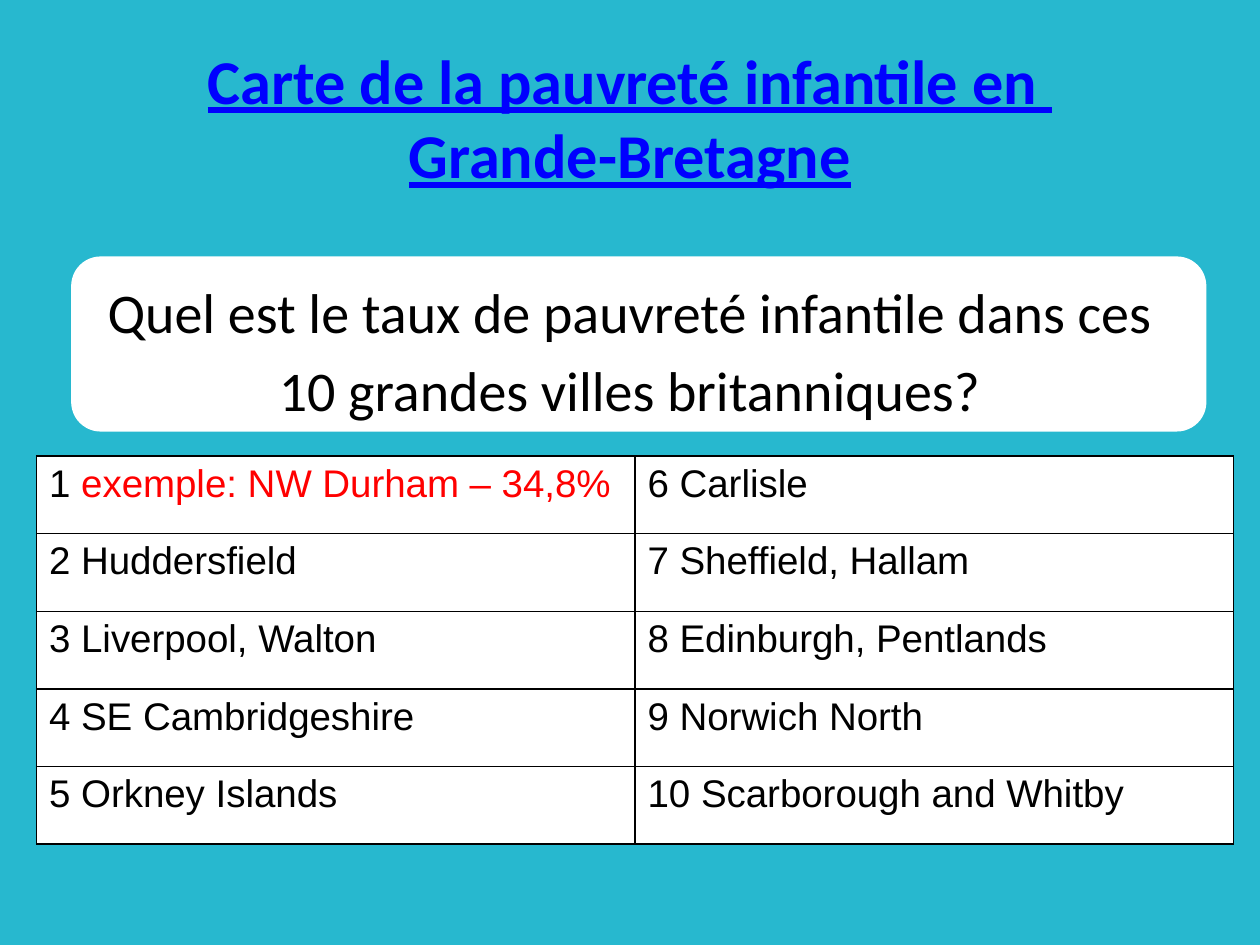
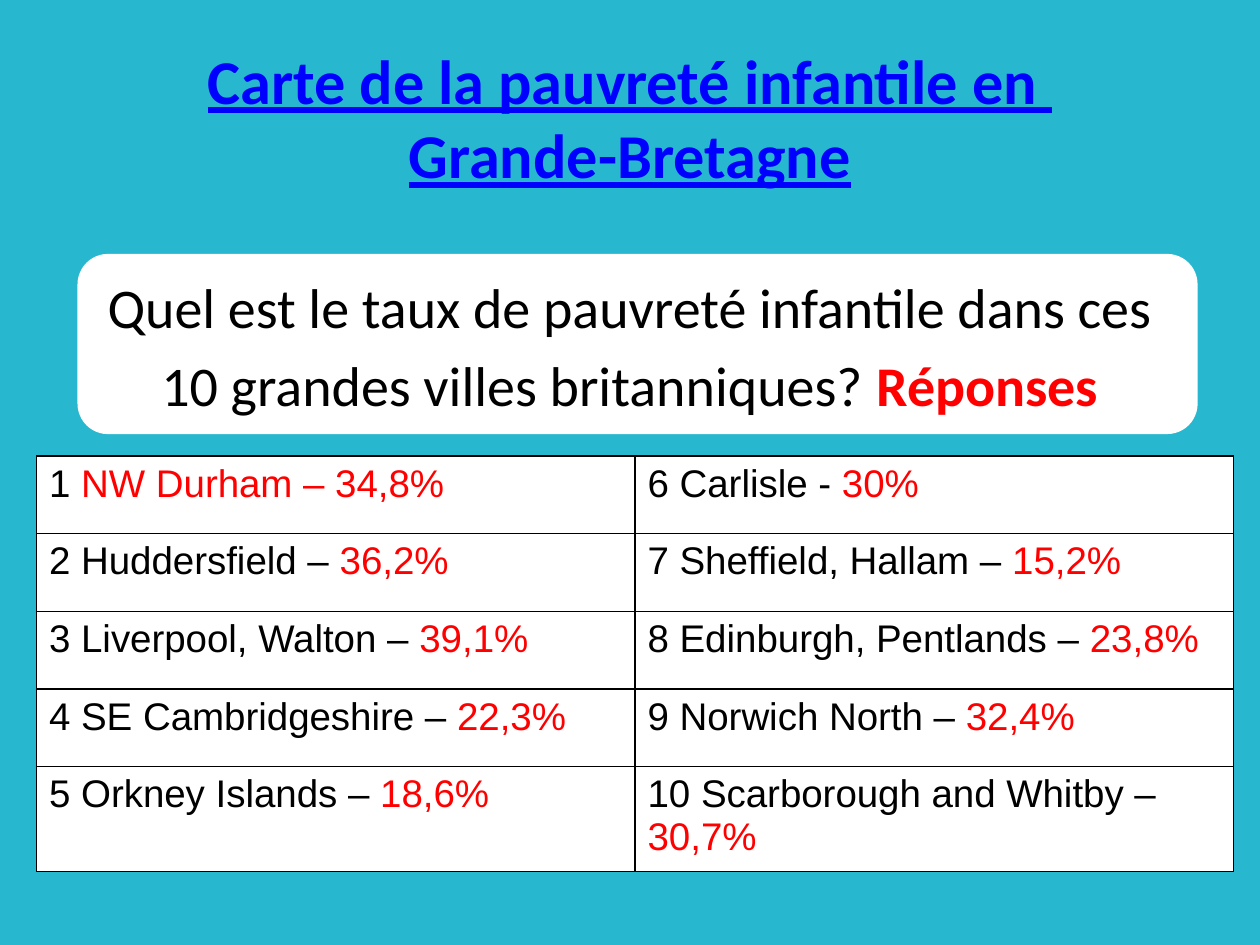
from dataclasses import dataclass
from typing import NamedTuple

from lxml import etree
from pptx import Presentation
from pptx.dml.color import RGBColor
from pptx.enum.shapes import MSO_SHAPE
from pptx.enum.text import MSO_ANCHOR, PP_ALIGN
from pptx.oxml.ns import qn
from pptx.util import Inches, Pt

ROUNDED = MSO_SHAPE.ROUNDED_RECTANGLE
TOP, MIDDLE = MSO_ANCHOR.TOP, MSO_ANCHOR.MIDDLE
LEFT, CENTER = PP_ALIGN.LEFT, PP_ALIGN.CENTER

SLIDE_WIDTH, SLIDE_HEIGHT = Inches(10), Inches(7.5)
GRID_COLUMNS, GRID_ROWS = 100, 75


@dataclass(frozen=True)
class Theme:
    background: str = "27B8CF"
    panel: str = "FFFFFF"
    ink: str = "000000"
    title: str = "0000FF"
    answer: str = "FF0000"
    heading_font: str = "Calibri"
    table_font: str = "Arial"
    title_size: float = 35.6
    question_size: float = 32
    table_size: float = 22
    question_gap: float = 6.4
    panel_line: float = 0.75
    border: float = 1


THEME = Theme()


class Box(NamedTuple):
    """Left, top, width and height in grid columns and rows."""
    column: float
    row: float
    columns: float
    rows: float

    def place(self):
        across, down = SLIDE_WIDTH / GRID_COLUMNS, SLIDE_HEIGHT / GRID_ROWS
        return (round(self.column * across), round(self.row * down),
                round(self.columns * across), round(self.rows * down))


TITLE_BOX = Box(5, 3, 90, 12.5)
TABLE_BOX = Box(2.9, 36.2, 95, 30.8)

TITLE_LINES = ["Carte de la pauvreté infantile en ", "Grande-Bretagne"]
QUESTION_LINES = ["Quel est le taux de pauvreté infantile dans ces",
                  "10 grandes villes britanniques?"]

# Each town: name, dash before the rate, rate
TOWNS = [
    ("NW Durham", "–", "34,8%"), ("Huddersfield", "–", "36,2%"),
    ("Liverpool, Walton", "–", "39,1%"), ("SE Cambridgeshire", "–", "22,3%"),
    ("Orkney Islands", "–", "18,6%"), ("Carlisle", "-", "30%"),
    ("Sheffield, Hallam", "–", "15,2%"), ("Edinburgh, Pentlands", "–", "23,8%"),
    ("Norwich North", "–", "32,4%"), ("Scarborough and Whitby", "–", "30,7%"),
]


def color(value):
    return RGBColor.from_string(value)


def write(para, text, *, font, size, ink=THEME.ink, bold=False,
          underline=False, align=LEFT):
    """Add one formatted span to a paragraph."""
    para.alignment = align
    span = para.add_run()
    span.text = text
    span.font.name = font
    span.font.size = Pt(size)
    span.font.color.rgb = color(ink)
    span.font.bold = bold
    span.font.underline = underline


def add_text_frame(page, box, anchor):
    frame = page.shapes.add_textbox(*box.place()).text_frame
    frame.word_wrap = True
    frame.vertical_anchor = anchor
    return frame


def add_title(page, box):
    para = add_text_frame(page, box, MIDDLE).paragraphs[0]
    for index, line in enumerate(TITLE_LINES):
        if index:
            para.add_line_break()
        write(para, line, font=THEME.heading_font, size=THEME.title_size,
              ink=THEME.title, bold=True, underline=True, align=CENTER)


def add_panel(page, box):
    panel = page.shapes.add_shape(ROUNDED, *box.place())
    panel.shadow.inherit = False
    panel.fill.solid()
    panel.fill.fore_color.rgb = color(THEME.panel)
    panel.line.color.rgb = color(THEME.panel)
    panel.line.width = Pt(THEME.panel_line)


def add_question(page, box, remark):
    style = dict(font=THEME.heading_font, size=THEME.question_size, align=CENTER)
    frame = add_text_frame(page, box, TOP)
    first, second = frame.paragraphs[0], frame.add_paragraph()
    write(first, QUESTION_LINES[0], **style)
    second.space_before = Pt(THEME.question_gap)
    write(second, QUESTION_LINES[1] + (" " if remark else ""), **style)
    if remark:
        write(second, remark, ink=THEME.answer, bold=True, **style)


def set_borders(cell):
    properties = cell._tc.get_or_add_tcPr()
    for index, side in enumerate(("lnL", "lnR", "lnT", "lnB")):
        line = etree.Element(qn(f"a:{side}"), w=str(Pt(THEME.border)))
        fill = etree.SubElement(line, qn("a:solidFill"))
        etree.SubElement(fill, qn("a:srgbClr"), val=THEME.ink)
        properties.insert(index, line)


def town_spans(number, answers):
    """Split a cell into its black label and its red answer."""
    name, dash, rate = TOWNS[number - 1]
    if number == 1:
        example = "" if answers else "exemple: "
        return f"{number} ", f"{example}{name} {dash} {rate}"
    if answers:
        return f"{number} {name} {dash} ", rate
    return f"{number} {name}", ""


def add_towns(page, box, answers):
    columns = 2
    rows = len(TOWNS) // columns
    table = page.shapes.add_table(rows, columns, *box.place()).table
    table.first_row = table.horz_banding = False
    for index in range(len(TOWNS)):
        column, row = divmod(index, rows)
        cell = table.cell(row, column)
        cell.fill.solid()
        cell.fill.fore_color.rgb = color(THEME.panel)
        set_borders(cell)
        para = cell.text_frame.paragraphs[0]
        for text, ink in zip(town_spans(index + 1, answers),
                             (THEME.ink, THEME.answer)):
            if text:
                write(para, text, font=THEME.table_font,
                      size=THEME.table_size, ink=ink)


def add_quiz_page(deck, panel_box, question_box, remark=""):
    page = deck.slides.add_slide(deck.slide_layouts[6])
    page.background.fill.solid()
    page.background.fill.fore_color.rgb = color(THEME.background)
    add_panel(page, panel_box)
    add_title(page, TITLE_BOX)
    add_question(page, question_box, remark)
    add_towns(page, TABLE_BOX, answers=bool(remark))


def main():
    deck = Presentation()
    deck.slide_width, deck.slide_height = SLIDE_WIDTH, SLIDE_HEIGHT
    # Questions, then answers
    add_quiz_page(deck, Box(5.7, 20.4, 90, 13.8), Box(5, 21.5, 90, 45.5))
    add_quiz_page(deck, Box(6.2, 20.2, 88.8, 14.2), Box(5, 21.1, 90, 45.9),
                  remark="Réponses")
    deck.save("out.pptx")


if __name__ == "__main__":
    main()
